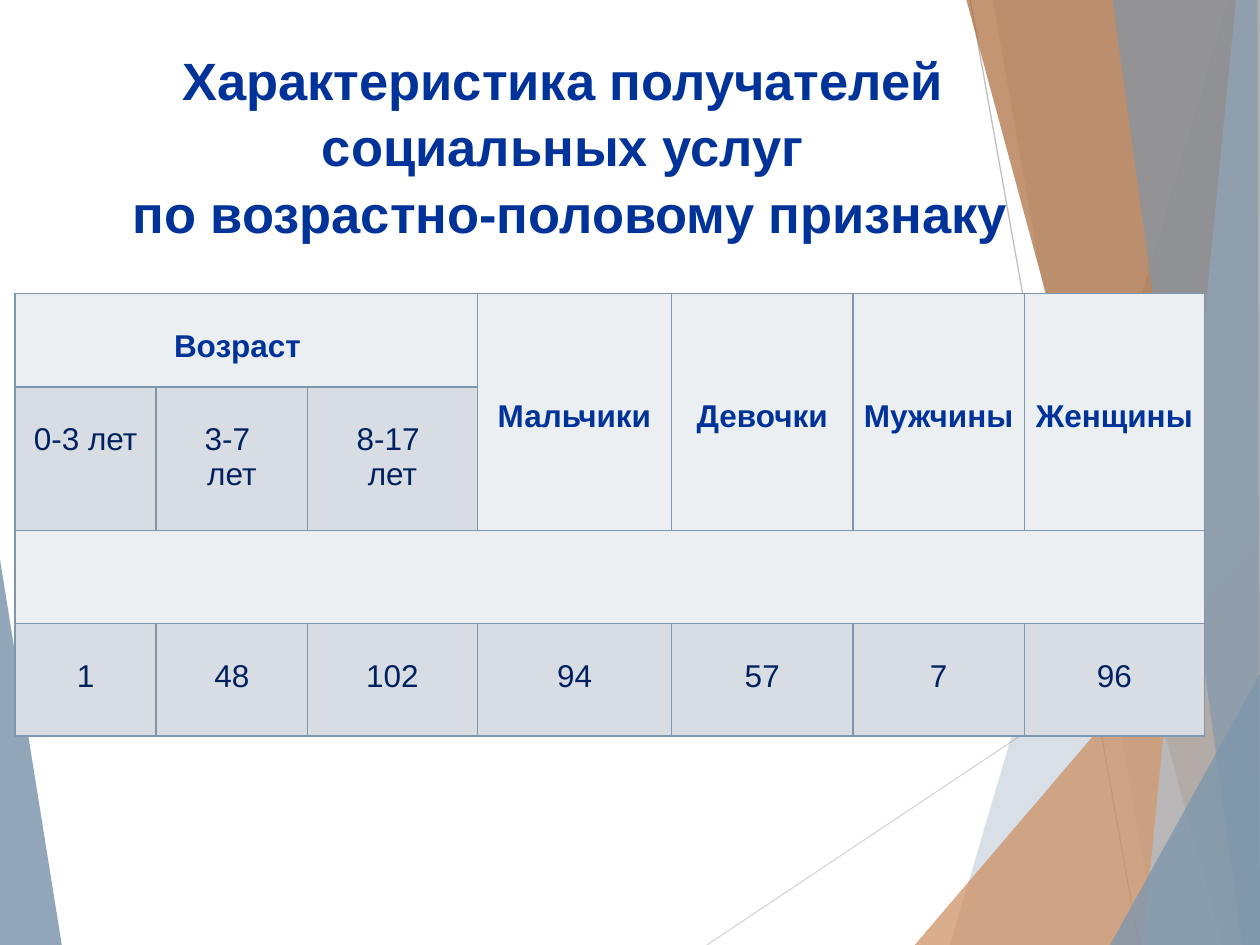
from lxml import etree
from pptx import Presentation
from pptx.dml.color import RGBColor
from pptx.enum.shapes import MSO_CONNECTOR
from pptx.enum.text import MSO_ANCHOR, PP_ALIGN
from pptx.oxml.ns import qn
from pptx.util import Inches, Pt

LINE = MSO_CONNECTOR.STRAIGHT
CENTER = PP_ALIGN.CENTER
TOP = MSO_ANCHOR.TOP

COLORS = {
    "steel": "7E97AD", "mist": "B2C1CE", "copper": "CC8E60", "rust": "AA6837",
    "ray": "D9D9D9", "ray_dark": "BFBFBF", "title": "003399", "text": "002060",
    "light": "ECEFF1", "band": "D8DDE3",
}
COLUMNS, ROWS = 100, 75
TEXT_LINE = 0.28

SHARDS = [
    ("steel", 30, [(97.5, 0), (75.4, 75), (100, 75), (100, 0)]),
    ("steel", 20, [(78.8, 0), (91.9, 75), (100, 75), (100, 0)]),
    ("copper", 72, [(72.6, 75), (100, 42.9), (100, 75)]),
    ("rust", 70, [(76.7, 0), (97, 75), (100, 75), (100, 0)]),
    ("mist", 70, [(98.1, 0), (90.7, 75), (100, 75), (100, 0)]),
    ("steel", 65, [(88.3, 0), (98.6, 75), (100, 75), (99.8, 0)]),
    ("steel", 80, [(88.1, 75), (100, 53.5), (100, 75)]),
]
COL_WIDTHS = [11.2, 12, 13.5, 15.4, 14.4, 13.6, 14.3]
ROW_HEIGHTS = [7.4, 11.2, 7.4, 8.9]
GENDERS = ["Мальчики", "Девочки", "Мужчины", "Женщины"]
AGES = ["0-3 лет", "3-7 \nлет", "8-17 \nлет"]
COUNTS = ["1", "48", "102", "94", "57", "7", "96"]


def rgb(name):
    return RGBColor.from_string(COLORS[name])


class SlideBuilder:
    font = "Arial"

    def __init__(self, prs):
        self.col = prs.slide_width / COLUMNS
        self.row = prs.slide_height / ROWS
        self.slide = prs.slides.add_slide(prs.slide_layouts[6])

    def x(self, columns):
        return round(columns * self.col)

    def y(self, rows):
        return round(rows * self.row)

    def shard(self, color, opacity, points):
        points = [(self.x(c), self.y(r)) for c, r in points]
        builder = self.slide.shapes.build_freeform(*points[0])
        builder.add_line_segments(points[1:])
        sp = builder.convert_to_shape()
        sp.shadow.inherit = False
        sp.fill.solid()
        sp.fill.fore_color.rgb = rgb(color)
        sp.line.fill.background()
        clr = sp.fill._xPr.find(".//" + qn("a:srgbClr"))
        etree.SubElement(clr, qn("a:alpha"), val=str(opacity * 1000))

    def ray(self, color, start, end):
        line = self.slide.shapes.add_connector(
            LINE, self.x(start[0]), self.y(start[1]), self.x(end[0]), self.y(end[1]))
        line.line.color.rgb = rgb(color)
        line.line.width = Pt(0.75)
        etree.SubElement(line._element.spPr, qn("a:effectLst"))

    def style(self, p, size, color, bold):
        p.alignment = CENTER
        p.font.name = self.font
        p.font.size = Pt(size)
        p.font.bold = bold
        p.font.color.rgb = rgb(color)

    def title(self, text, left, top, width, height):
        sp = self.slide.shapes.add_textbox(
            self.x(left), self.y(top), self.x(width), self.y(height))
        tf = sp.text_frame
        tf.word_wrap = True
        tf.vertical_anchor = TOP
        p = tf.paragraphs[0]
        p.text = text
        p.line_spacing = 1.05
        self.style(p, 30, "title", True)

    def table(self, left, top, widths, heights):
        table = self.slide.shapes.add_table(
            len(heights), len(widths), self.x(left), self.y(top),
            self.x(sum(widths)), self.y(sum(heights))).table
        for column, width in zip(table.columns, widths):
            column.width = self.x(width)
        for row, height in zip(table.rows, heights):
            row.height = self.y(height)
        for i, row in enumerate(table.rows):
            for j, cell in enumerate(row.cells):
                self.borders(cell)
                cell.fill.solid()
                banded = i == 3 or (i == 1 and j < 3)
                cell.fill.fore_color.rgb = rgb("band" if banded else "light")
        return table

    def borders(self, cell):
        tcPr = cell._tc.get_or_add_tcPr()
        for side in ("a:lnL", "a:lnR", "a:lnT", "a:lnB"):
            ln = etree.SubElement(tcPr, qn(side), w=str(Pt(1)))
            fill = etree.SubElement(ln, qn("a:solidFill"))
            etree.SubElement(fill, qn("a:srgbClr"), val=COLORS["steel"])

    def cell(self, cell, text, color="text", bold=False, lines_above=1):
        cell.margin_left = cell.margin_right = Inches(0.07)
        cell.margin_top = Inches(TEXT_LINE * lines_above)
        cell.margin_bottom = 0
        cell.vertical_anchor = TOP
        cell.text = text
        for p in cell.text_frame.paragraphs:
            self.style(p, 18, color, bold)


def main():
    prs = Presentation()
    prs.slide_width, prs.slide_height = Inches(10), Inches(7.5)
    s = SlideBuilder(prs)

    s.shard("steel", 85, [(0, 44.4), (4.9, 75), (0, 75)])
    s.ray("ray", (56.1, 75), (100, 45.7))
    s.ray("ray_dark", (77, 0), (90.4, 75))
    for shard in SHARDS:
        s.shard(*shard)

    s.title("Характеристика получателей \vсоциальных услуг \v"
            "по возрастно-половому признаку", -2, 3.1, 94.5, 16)

    table = s.table(1.2, 23.3, COL_WIDTHS, ROW_HEIGHTS)
    age = table.cell(0, 0)
    age.merge(table.cell(0, 2))
    s.cell(age, "Возраст", "title", True)
    age.margin_right = Inches(0.21)
    for j, gender in enumerate(GENDERS, start=len(AGES)):
        table.cell(0, j).merge(table.cell(1, j))
        s.cell(table.cell(0, j), gender, "title", True, 3)
    for j, label in enumerate(AGES):
        s.cell(table.cell(1, j), label)
    table.cell(2, 0).merge(table.cell(2, len(COL_WIDTHS) - 1))
    for j, count in enumerate(COUNTS):
        s.cell(table.cell(3, j), count)

    prs.save("out.pptx")


if __name__ == "__main__":
    main()
